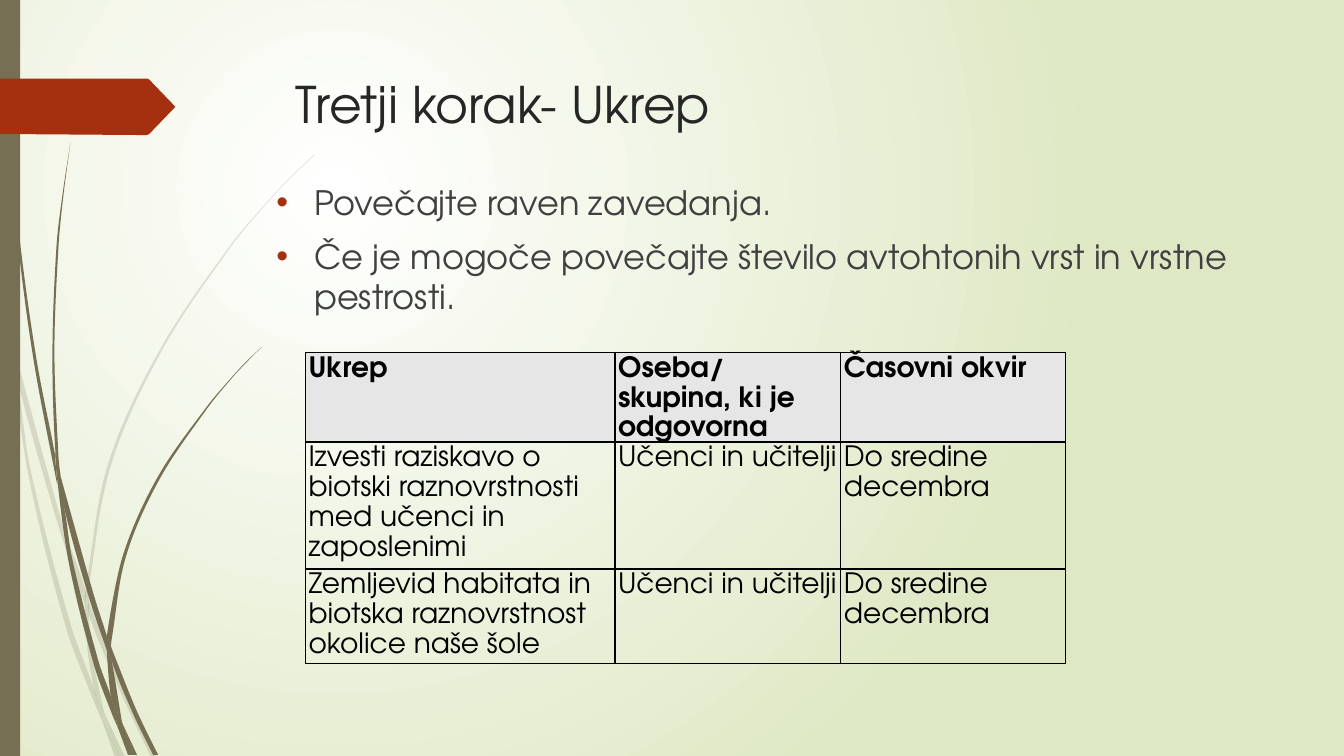
from pptx import Presentation
from pptx.dml.color import RGBColor
from pptx.enum.shapes import MSO_SHAPE
from pptx.enum.text import MSO_ANCHOR as ANCHOR, MSO_AUTO_SIZE as AUTO, PP_ALIGN as ALIGN
from pptx.oxml import parse_xml
from pptx.oxml.ns import nsdecls, qn
from pptx.util import Inches, Pt
from lxml.etree import SubElement
from math import dist, hypot

COLS, ROWS = 1333, 750
CELL = Inches(0.01)
FONT = "TeX Gyre Adventor"
WHITE = RGBColor(0xFF, 0xFF, 0xFF)
PALE_GREEN = RGBColor(0xDF, 0xE8, 0xC4)
OLIVE = RGBColor(0x76, 0x6F, 0x54)
RUST = RGBColor(0xA5, 0x30, 0x10)
DARK = RGBColor(0x26, 0x26, 0x26)
GREY = RGBColor(0x40, 0x40, 0x40)
BLACK = RGBColor(0, 0, 0)
HEADER = RGBColor(0xE6, 0xE6, 0xE6)

PALE_BLADES = [
    [(11, 350), (9, 322), (0, 282), (0, 299), (10, 344)],
    [(58, 522), (84, 599), (85, 586), (62, 520), (14, 345), (17, 376)],
    [(92, 607), (88, 596), (88, 610), (123, 694), (150, 751), (155, 751), (127, 692)],
    [(119, 751), (124, 751), (105, 711)],
    [(93, 683), (70, 619), (31, 469), (17, 376), (11, 350), (28, 470), (65, 621),
     (92, 693), (101, 714), (99, 707)],
    [(84, 599), (87, 646), (93, 683), (96, 692), (105, 711), (103, 706), (91, 646),
     (88, 610), (88, 608)],
    [(88, 584), (110, 462), (160, 349), (229, 245), (268, 198), (290, 175), (312, 154),
     (312, 153), (289, 175), (268, 197), (228, 244), (158, 348), (107, 461), (85, 584),
     (85, 586), (88, 596)],
    [(101, 714), (114, 751), (119, 751)],
    [(88, 608), (88, 610), (88, 596), (85, 586), (84, 599)],
    [(96, 692), (93, 683), (99, 707), (101, 714), (119, 751), (105, 711)],
]
DARK_BLADES = [
    [(7, 110), (17, 233), (33, 355), (56, 477), (57, 481), (55, 457), (55, 453),
     (36, 355), (19, 232), (8, 109), (5, 48), (4, 0), (3, 0), (4, 48)],
    [(88, 592), (106, 645), (106, 633), (106, 631), (93, 590), (60, 472), (64, 505)],
    [(113, 649), (110, 641), (111, 656), (132, 708), (152, 749), (157, 749), (136, 706)],
    [(110, 691), (98, 657), (72, 556), (64, 505), (57, 477), (68, 557), (93, 659),
     (111, 708), (117, 722), (116, 717)],
    [(60, 472), (58, 453), (54, 349), (58, 245), (63, 193), (70, 141), (62, 193),
     (56, 245), (52, 349), (55, 449)],
    [(133, 749), (136, 749), (122, 719)],
    [(57, 477), (64, 505), (60, 472), (55, 449), (55, 453)],
    [(111, 633), (125, 552), (158, 476), (205, 406), (231, 374), (245, 359), (260, 344),
     (245, 358), (231, 373), (204, 405), (156, 474), (122, 551), (106, 631), (110, 641)],
    [(117, 722), (127, 749), (131, 749)],
    [(106, 645), (110, 691), (116, 706), (122, 719), (121, 716), (111, 656), (109, 651)],
    [(106, 645), (109, 651), (111, 656), (110, 641), (106, 631), (106, 633)],
    [(116, 706), (110, 691), (116, 717), (117, 722), (130, 749), (133, 749), (122, 719)],
]
ARROW = [(174, 106), (148, 133), (146, 134), (136, 134), (0, 133), (0, 78), (136, 78),
         (146, 78), (148, 79)]
BULLETS = ["Povečajte raven zavedanja.",
           "Če je mogoče povečajte število avtohtonih vrst in vrstne pestrosti."]
ACTIONS = [
    ["Ukrep", "Oseba/skupina, ki je odgovorna", "Časovni okvir"],
    ["Izvesti raziskavo o biotski raznovrstnosti med učenci in zaposlenimi",
     "Učenci in učitelji", "Do sredine decembra"],
    ["Zemljevid habitata in biotska raznovrstnost okolice naše šole",
     "Učenci in učitelji", "Do sredine decembra"],
]


def grid(*cells):
    return [int(n * CELL) for n in cells]


def apply(obj, **values):
    for name, value in values.items():
        setattr(obj, name, value)


def write(p, text, size, color, bold=False):
    r = p.add_run()
    r.text = text
    apply(r.font, name=FONT, size=Pt(size), bold=bold)
    r.font.color.rgb = color


def paint_background(slide):
    fill = slide.background.fill
    fill.gradient()
    for stop, color in zip(fill.gradient_stops, (WHITE, PALE_GREEN)):
        stop.color.rgb = color
    lin = slide._element.find(".//" + qn("a:lin"))
    lin.getparent().replace(lin, parse_xml(
        f'<a:path {nsdecls("a")} path="circle">'
        '<a:fillToRect l="50000" t="50000" r="100000" b="100000"/></a:path>'))


def paint(sp, color, alpha=None):
    sp.shadow.inherit = False
    sp.fill.solid()
    sp.fill.fore_color.rgb = color
    sp.line.fill.background()
    if alpha:
        clr = sp._element.spPr.find(".//" + qn("a:srgbClr"))
        SubElement(clr, qn("a:alpha"), val=str(alpha * 1000))


def tangent(before, knot, after):
    ax, ay = knot[0] - before[0], knot[1] - before[1]
    bx, by = after[0] - knot[0], after[1] - knot[1]
    if ax * bx + ay * by < 0.85 * hypot(ax, ay) * hypot(bx, by):
        return 0, 0
    length = hypot(ax + bx, ay + by)
    return (ax + bx) / length, (ay + by) / length


def add_outline(slide, knots, color, alpha=None, curved=True):
    knots = [tuple(grid(*knot)) for knot in knots]
    builder = slide.shapes.build_freeform(*knots[0])
    builder.add_line_segments(knots[1:] + knots[:1], close=True)
    sp = builder.convert_to_shape()
    paint(sp, color, alpha)
    if not curved:
        return
    left, top = min(x for x, y in knots), min(y for x, y in knots)
    slopes = [tangent(*trio) for trio in zip(knots[-1:] + knots, knots, knots[1:] + knots[:1])]
    ends = zip(knots, knots[1:] + knots[:1], slopes, slopes[1:] + slopes[:1])
    lines = sp._element.findall(".//" + qn("a:lnTo"))
    for line, (a, b, leave, arrive) in zip(lines, ends):
        reach = dist(a, b) / 3
        curve = SubElement(line.getparent(), qn("a:cubicBezTo"))
        for (x, y), (dx, dy), k in ((a, leave, reach), (b, arrive, -reach), (b, arrive, 0)):
            SubElement(curve, qn("a:pt"), x=str(round(x + dx * k - left)),
                       y=str(round(y + dy * k - top)))
        line.getparent().replace(line, curve)


def place(slide, sp, box):
    left, top, width, height = grid(*box)
    apply(sp, left=left, top=top, width=width, height=height)
    slide.shapes._spTree.append(sp._element)
    tf = sp.text_frame
    apply(tf, word_wrap=True, auto_size=AUTO.NONE, vertical_anchor=ANCHOR.TOP)
    return tf


def add_title(slide, text, box):
    p = place(slide, slide.shapes.title, box).paragraphs[0]
    apply(p, alignment=ALIGN.LEFT, line_spacing=1.0)
    write(p, text, 36, DARK)


def add_bullets(slide, items, box):
    tf = place(slide, slide.placeholders[1], box)
    indent = grid(37.5)[0]
    for i, text in enumerate(items):
        p = tf.add_paragraph() if i else tf.paragraphs[0]
        apply(p, space_before=Pt(10), line_spacing=1.0, alignment=ALIGN.LEFT)
        pPr = p._p.get_or_add_pPr()
        pPr.set("marL", str(indent))
        pPr.set("indent", str(-indent))
        color = SubElement(pPr, qn("a:buClr"))
        SubElement(color, qn("a:srgbClr"), val=str(RUST))
        SubElement(pPr, qn("a:buFont"), typeface="Arial")
        SubElement(pPr, qn("a:buChar"), char="•")
        write(p, text, 24, GREY)


def add_borders(cell):
    tcPr = cell._tc.get_or_add_tcPr()
    for i, side in enumerate(("lnL", "lnR", "lnT", "lnB")):
        tcPr.insert(i, parse_xml(
            f'<a:{side} {nsdecls("a")} w="{Pt(1)}"><a:solidFill>'
            f'<a:srgbClr val="{BLACK}"/></a:solidFill></a:{side}>'))


def add_actions(slide, data, origin, widths, heights):
    box = grid(*origin, sum(widths), sum(heights))
    table = slide.shapes.add_table(len(data), len(widths), *box).table
    apply(table, first_row=False, horz_banding=False)
    for col, width in zip(table.columns, grid(*widths)):
        col.width = width
    for row, height in zip(table.rows, grid(*heights)):
        row.height = height
    side = grid(3)[0]
    for i, texts in enumerate(data):
        for j, text in enumerate(texts):
            cell = table.cell(i, j)
            apply(cell, margin_left=side, margin_right=side, margin_top=0, margin_bottom=0)
            cell.fill.background()
            if i == 0:
                cell.fill.solid()
                cell.fill.fore_color.rgb = HEADER
            add_borders(cell)
            p = cell.text_frame.paragraphs[0]
            p.line_spacing = 1.15
            write(p, text, 20, BLACK, bold=i == 0)


def main():
    prs = Presentation()
    prs.slide_width, prs.slide_height = grid(COLS, ROWS)
    slide = prs.slides.add_slide(prs.slide_layouts[1])
    paint_background(slide)
    for blades, alpha in ((PALE_BLADES, 20), (DARK_BLADES, None)):
        for knots in blades:
            add_outline(slide, knots, OLIVE, alpha)
    stripe = slide.shapes.add_shape(MSO_SHAPE.RECTANGLE, *grid(0, 0, 20, ROWS))
    paint(stripe, OLIVE)
    add_outline(slide, ARROW, RUST, curved=False)
    add_title(slide, "Tretji korak- Ukrep", (283.5, 68, 975, 140))
    add_bullets(slide, BULLETS, (264, 175, 994, 526))
    add_actions(slide, ACTIONS, (303, 350), (307, 224, 223), (63, 126, 94))
    prs.save("out.pptx")


if __name__ == "__main__":
    main()
